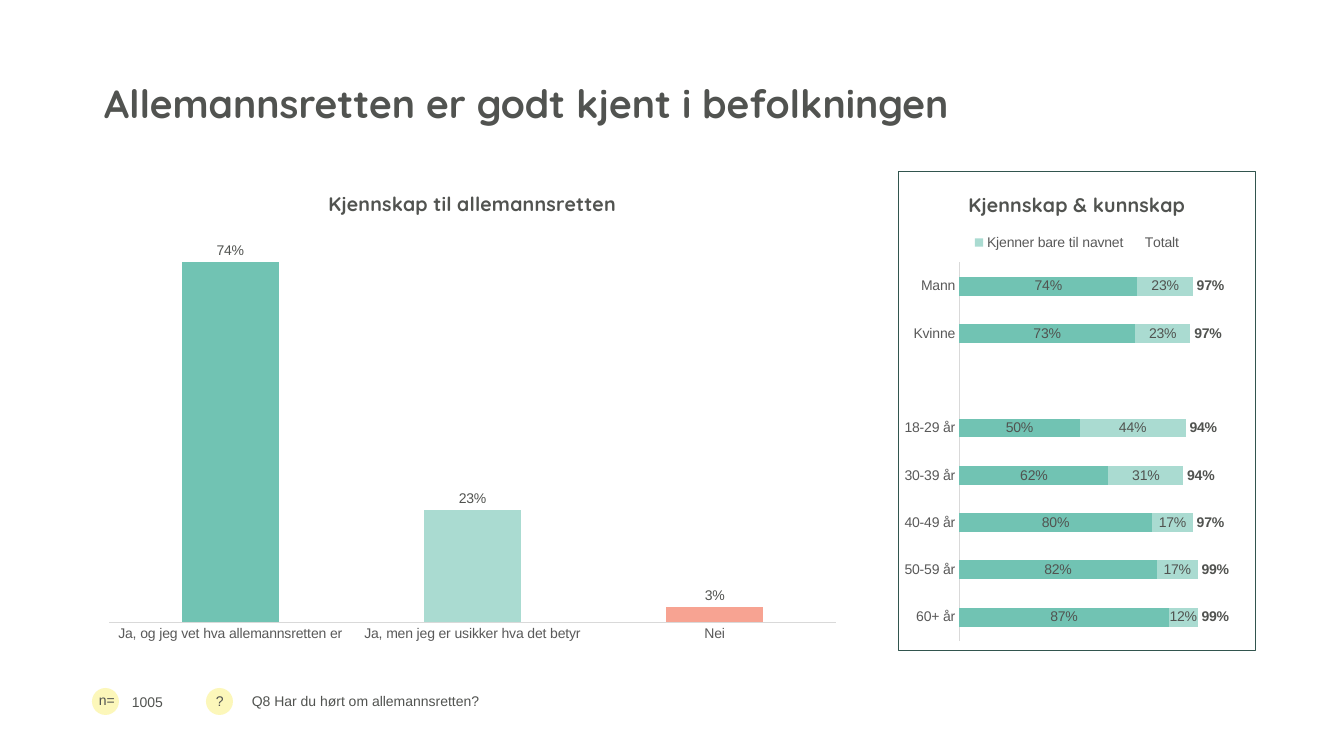
from dataclasses import dataclass

from lxml import etree
from pptx import Presentation
from pptx.chart.data import CategoryChartData as ChartData
from pptx.dml.color import RGBColor
from pptx.enum.chart import XL_CHART_TYPE as Kind
from pptx.enum.chart import XL_LABEL_POSITION as Pos
from pptx.enum.chart import XL_LEGEND_POSITION as Side
from pptx.enum.chart import XL_TICK_MARK as Tick
from pptx.enum.shapes import MSO_SHAPE as Shape
from pptx.enum.text import MSO_ANCHOR as Anchor
from pptx.enum.text import PP_ALIGN as Align
from pptx.oxml import parse_xml
from pptx.oxml.ns import nsdecls, qn
from pptx.util import Emu, Pt

SCALE = 914400 / 100.8


def px(n):
    return Emu(round(n * SCALE))


@dataclass(frozen=True)
class Theme:
    ink: str = "515350"
    soft: str = "595959"
    rule: str = "D9D9D9"
    frame: str = "32554E"
    badge: str = "FCF7BA"
    teal: str = "71C3B3"
    mint: str = "AADBD1"
    coral: str = "F7A392"
    body: str = "Arial"
    head: str = "Quicksand"
    small: int = 10
    mid: int = 14
    large: int = 28


def style(font, size, name, color, bold=False):
    font.size, font.name, font.bold = Pt(size), name, bold
    font.color.rgb = RGBColor.from_string(color)


def paint(fill, color):
    fill.solid()
    fill.fore_color.rgb = RGBColor.from_string(color)


def write(frame, text, *, size, name, color, bold=False, align=Align.LEFT,
          anchor=Anchor.TOP, wrap=True, lead=None):
    frame.word_wrap, frame.vertical_anchor = wrap, anchor
    para = frame.paragraphs[0]
    para.alignment, para.line_spacing = align, lead
    run = para.add_run()
    run.text = text
    style(run.font, size, name, color, bold)


def place(plot, x, y, w, h):
    """Fix the inner plot area as fractions of the chart."""
    old = plot.find(qn("c:layout"))
    if old is not None:
        plot.remove(old)
    ends = "".join(f'<c:{k} val="{v}"/>' for k, v in zip("xywh", (x, y, w, h)))
    plot.insert(0, parse_xml(
        f'<c:layout {nsdecls("c")}><c:manualLayout><c:layoutTarget val="inner"/>'
        f'<c:xMode val="edge"/><c:yMode val="edge"/>{ends}'
        '</c:manualLayout></c:layout>'))


def border(chart, color):
    line = "<a:noFill/>"
    if color:
        line = f'<a:solidFill><a:srgbClr val="{color}"/></a:solidFill>'
    chart.element.find(qn("c:txPr")).addprevious(parse_xml(
        f'<c:spPr {nsdecls("c", "a")}><a:noFill/><a:ln w="9525">{line}</a:ln></c:spPr>'))


class Page:
    def __init__(self, deck, theme):
        self.theme = theme
        self.slide = deck.slides.add_slide(deck.slide_layouts[5])
        self.shapes = self.slide.shapes

    def title(self, text, x, y, w, h):
        t, box = self.theme, self.shapes.title
        box.left, box.top, box.width, box.height = map(px, (x, y, w, h))
        write(box.text_frame, text, size=t.large, name=t.head, color=t.ink,
              bold=True, anchor=Anchor.BOTTOM, lead=0.9)

    def text(self, text, x, y, w, h, **form):
        t = self.theme
        box = self.shapes.add_textbox(*map(px, (x, y, w, h)))
        write(box.text_frame, text, size=t.small, name=t.body, color=t.ink, **form)

    def badge(self, x, y, size):
        dot = self.shapes.add_shape(Shape.OVAL, *map(px, (x, y, size, size)))
        dot.shadow.inherit = False
        paint(dot.fill, self.theme.badge)
        dot.line.fill.background()

    def chart(self, kind, title, cats, rows, area, inner, top, frame=None):
        t = self.theme
        data = ChartData(number_format="0%")
        data.categories = cats
        for name, vals, *_ in rows:
            data.add_series(name, vals)
        chart = self.shapes.add_chart(kind, *map(px, area), data).chart
        style(chart.font, t.small, t.body, t.ink)
        border(chart, frame)
        chart.has_legend = False
        chart.has_title = True
        write(chart.chart_title.text_frame, title, size=t.mid, name=t.head,
              color=t.ink, bold=True, align=Align.CENTER)
        place(chart.element.find(".//" + qn("c:plotArea")), *inner)

        axis = chart.category_axis
        axis.major_tick_mark = axis.minor_tick_mark = Tick.NONE
        axis.format.line.color.rgb = RGBColor.from_string(t.rule)
        axis.format.line.width = Pt(0.75)
        style(axis.tick_labels.font, t.small, t.body, t.soft)
        scale = chart.value_axis
        scale.visible = scale.has_major_gridlines = False
        scale.minimum_scale, scale.maximum_scale = 0, top

        plot = chart.plots[0]
        plot.gap_width, plot.vary_by_categories = 150, False
        for series, (_, _, color, pos, bold) in zip(plot.series, rows):
            series.invert_if_negative = False
            if color:
                paint(series.format.fill, color)
            else:
                series.format.fill.background()
            tags = series.data_labels
            tags.show_value = True
            tags.number_format, tags.number_format_is_linked = "0%", False
            tags.position = pos
            style(tags.font, t.small, t.body, t.ink, bold)
        return chart

    def legend(self, chart, hide):
        t = self.theme
        chart.has_legend = True
        key = chart.legend
        key.position, key.include_in_layout = Side.TOP, False
        style(key.font, t.small, t.body, t.soft)
        entry = etree.Element(qn("c:legendEntry"))
        etree.SubElement(entry, qn("c:idx")).set("val", str(hide))
        etree.SubElement(entry, qn("c:delete")).set("val", "1")
        key._element.find(qn("c:legendPos")).addnext(entry)


def main():
    deck = Presentation()
    deck.slide_width, deck.slide_height = px(1344), px(756)
    t = Theme()
    page = Page(deck, t)

    for x in (206, 92):
        page.badge(x, 688, 27)
    page.text("n=", 89, 687, 45, 27, wrap=False)
    page.text("?", 206, 688, 25, 27, wrap=False)
    page.title("Allemannsretten er godt kjent i befolkningen", 94, 39, 1161, 93)

    known = page.chart(
        Kind.COLUMN_CLUSTERED, "Kjennskap til allemannsretten",
        ["Ja, og jeg vet hva allemannsretten er",
         "Ja, men jeg er usikker hva det betyr", "Nei"],
        [("Andel", (0.74, 0.23, 0.03), t.teal, Pos.OUTSIDE_END, False)],
        (94, 171, 757, 480), (0.02, 0.13, 0.96, 0.81), 0.8)
    for i, color in enumerate((t.mint, t.coral), 1):
        paint(known.plots[0].series[0].points[i].format.fill, color)

    page.text("Q8 Har du hørt om allemannsretten?", 242, 672, 1013, 58,
              anchor=Anchor.MIDDLE)
    page.text("1005", 122, 688, 75, 27, anchor=Anchor.MIDDLE)

    groups = page.chart(
        Kind.BAR_STACKED, "Kjennskap & kunnskap",
        ["Mann", "Kvinne", "", "18-29 år", "30-39 år", "40-49 år",
         "50-59 år", "60+ år"],
        [("Vet hva det er", (0.74, 0.73, None, 0.5, 0.62, 0.8, 0.82, 0.87),
          t.teal, Pos.CENTER, False),
         ("Kjenner bare til navnet",
          (0.23, 0.23, None, 0.44, 0.31, 0.17, 0.17, 0.12),
          t.mint, Pos.CENTER, False),
         ("Totalt", (0.97, 0.97, None, 0.94, 0.94, 0.97, 0.99, 0.99),
          None, Pos.INSIDE_BASE, True)],
        (898, 171, 358, 480), (0.17, 0.19, 0.81, 0.79), 1.2, t.frame)
    groups.category_axis.reverse_order = True
    page.legend(groups, 2)

    deck.save("out.pptx")


if __name__ == "__main__":
    main()
